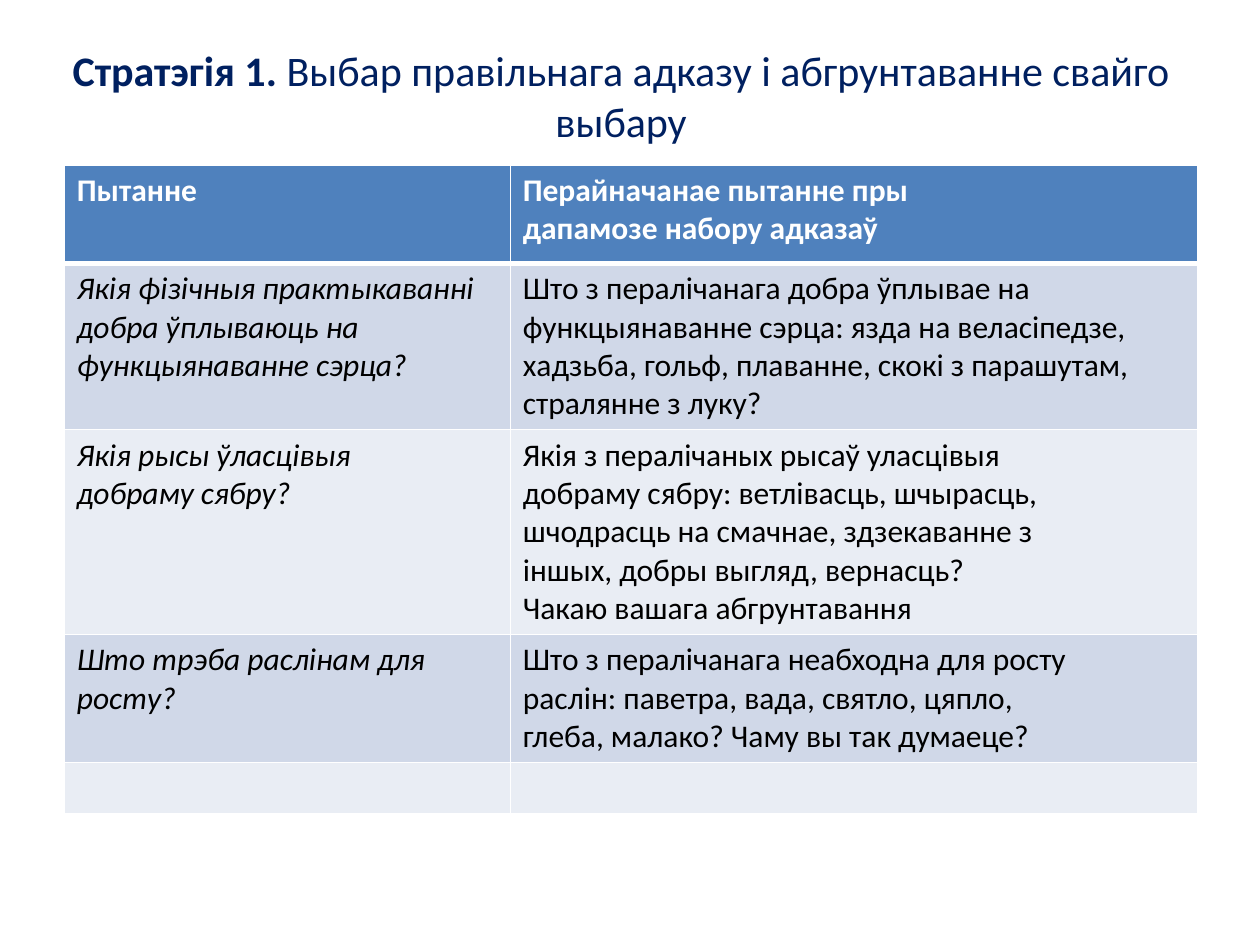
from typing import NamedTuple

from lxml.etree import SubElement
from pptx import Presentation
from pptx.dml.color import RGBColor
from pptx.enum.text import MSO_ANCHOR, PP_ALIGN
from pptx.oxml.ns import qn
from pptx.util import Inches, Pt

FONT = "Calibri"
WHITE, BLACK, NAVY = "FFFFFF", "000000", "002060"
HEADER_FILL = "4F81BD"
BAND_FILLS = ("D0D8E8", "E9EDF4")
COLUMN_WIDTHS = (3.54, 5.46)
HEADER_HEIGHT, ROW_HEIGHT = 0.78, 0.41


class Row(NamedTuple):
    question: list[str]
    reworded: list[str]


ROWS = [
    Row(["Пытанне"],
        ["Перайначанае пытанне пры", "дапамозе набору адказаў"]),
    Row(["Якія фізічныя практыкаванні", "добра ўплываюць на",
         "функцыянаванне сэрца?"],
        ["Што з пералічанага добра ўплывае на",
         "функцыянаванне сэрца: язда на веласіпедзе, хадзьба, гольф, "
         "плаванне, скокі з парашутам, стралянне з луку?"]),
    Row(["Якія рысы ўласцівыя", "добраму сябру?"],
        ["Якія з пералічаных рысаў уласцівыя",
         "добраму сябру: ветлівасць, шчырасць,",
         "шчодрасць на смачнае, здзекаванне з",
         "іншых, добры выгляд, вернасць?",
         "Чакаю вашага абгрунтавання"]),
    Row(["Што трэба раслінам для росту?"],
        ["Што з пералічанага неабходна для росту",
         "раслін: паветра, вада, святло, цяпло,",
         "глеба, малако? Чаму вы так думаеце?"]),
    Row([], []),
]


def rgb(value: str) -> RGBColor:
    return RGBColor.from_string(value)


def add_run(p, text: str, size: int, color: str, bold=False, italic=False) -> None:
    r = p.add_run()
    r.text = text
    r.font.name = FONT
    r.font.size = Pt(size)
    r.font.bold = bold
    r.font.italic = italic
    r.font.color.rgb = rgb(color)


def add_title(s) -> None:
    sp = s.shapes.add_textbox(Inches(0.43), Inches(0.13), Inches(9), Inches(1.25))
    tf = sp.text_frame
    tf.word_wrap = True
    tf.vertical_anchor = MSO_ANCHOR.MIDDLE
    p = tf.paragraphs[0]
    p.alignment = PP_ALIGN.CENTER
    add_run(p, "Стратэгія 1. ", 24, NAVY, bold=True)
    add_run(p, "Выбар правільнага адказу і абгрунтаванне свайго выбару", 24, NAVY)


def set_borders(cell, top: int, bottom: int) -> None:
    """Draw white cell borders; the top and bottom widths are in points."""
    tc_pr = cell._tc.get_or_add_tcPr()
    for side, width in (("L", 1), ("R", 1), ("T", top), ("B", bottom)):
        ln = SubElement(tc_pr, qn(f"a:ln{side}"), w=str(Pt(width)))
        fill = SubElement(ln, qn("a:solidFill"))
        SubElement(fill, qn("a:srgbClr"), val=WHITE)


def fill_cell(cell, lines: list[str], row: int, italic: bool) -> None:
    header = row == 0
    set_borders(cell, top=3 if row == 1 else 1, bottom=3 if header else 1)
    cell.fill.solid()
    cell.fill.fore_color.rgb = rgb(HEADER_FILL if header else BAND_FILLS[(row - 1) % 2])
    tf = cell.text_frame
    tf.paragraphs[0].font.size = Pt(18)
    for i, line in enumerate(lines):
        p = tf.add_paragraph() if i else tf.paragraphs[0]
        add_run(p, line, 18, WHITE if header else BLACK, bold=header, italic=italic)


def add_question_table(s) -> None:
    height = HEADER_HEIGHT + ROW_HEIGHT * (len(ROWS) - 1)
    table = s.shapes.add_table(len(ROWS), len(COLUMN_WIDTHS), Inches(0.51),
                               Inches(1.31), Inches(9), Inches(height)).table
    for column, width in zip(table.columns, COLUMN_WIDTHS):
        column.width = Inches(width)
    for i, row in enumerate(ROWS):
        table.rows[i].height = Inches(ROW_HEIGHT if i else HEADER_HEIGHT)
        fill_cell(table.cell(i, 0), row.question, i, italic=i > 0)
        fill_cell(table.cell(i, 1), row.reworded, i, italic=False)


def main() -> None:
    prs = Presentation()
    prs.slide_width, prs.slide_height = Inches(10), Inches(7.5)
    s = prs.slides.add_slide(prs.slide_layouts[6])
    add_question_table(s)
    add_title(s)
    prs.save("out.pptx")


if __name__ == "__main__":
    main()
